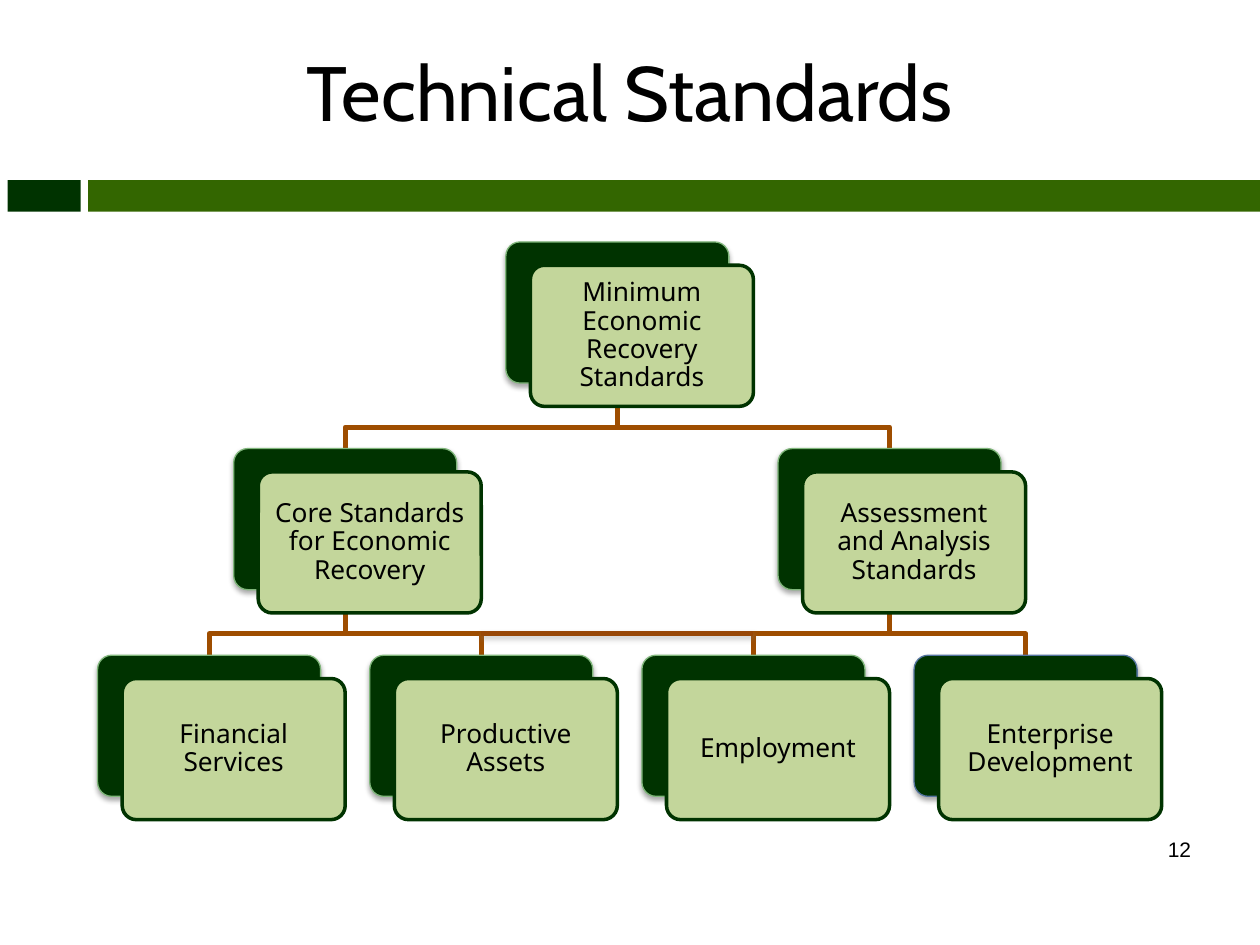
"""Build the Technical Standards slide: a three-level tree of standards."""
from lxml import etree
from pptx import Presentation
from pptx.dml.color import RGBColor
from pptx.enum.shapes import MSO_CONNECTOR, MSO_SHAPE
from pptx.enum.text import MSO_ANCHOR, PP_ALIGN
from pptx.oxml.ns import qn
from pptx.util import Inches, Pt

BLACK = RGBColor(0x00, 0x00, 0x00)
DARK_GREEN = RGBColor(0x00, 0x33, 0x00)
BAR_GREEN = RGBColor(0x33, 0x66, 0x00)
CARD_GREEN = RGBColor(0xC3, 0xD6, 0x9B)
EDGE_GREEN = RGBColor(0x80, 0xB6, 0x7B)
EDGE_BLUE = RGBColor(0x54, 0x74, 0xA0)
BRANCH_BROWN = RGBColor(0x9E, 0x4D, 0x00)
LINK_BROWN = RGBColor(0x98, 0x48, 0x07)

CARD_WIDTH, CARD_HEIGHT = 1.77, 1.12
OFFSET_X, OFFSET_Y = 0.195, 0.185
FIRST_CENTER, COLUMN_STEP = 1.66, 1.08
FIRST_TOP, LEVEL_STEP = 1.92, 1.64
STEM = 0.35

NODES = [
    ("Minimum Economic Recovery Standards", 3, 0, None),
    ("Core Standards for Economic Recovery", 1, 1, 3),
    ("Financial Services", 0, 2, 1),
    ("Productive Assets", 2, 2, 1),
    ("Assessment and Analysis Standards", 5, 1, 3),
    ("Employment", 4, 2, 5),
    ("Enterprise Development", 6, 2, 5),
]


def add_block(kind, left, top, width, height, fill, edge=None, weight=0):
    block = slide.shapes.add_shape(
        kind, Inches(left), Inches(top), Inches(width), Inches(height))
    block.shadow.inherit = False
    block.fill.solid()
    block.fill.fore_color.rgb = fill
    if edge is None:
        block.line.fill.background()
    else:
        block.adjustments[0] = 0.1
        block.line.color.rgb = edge
        block.line.width = Pt(weight)
    return block


def add_shadow(properties, color, opacity, distance):
    effects = properties.find(qn("a:effectLst"))
    if effects is None:
        effects = etree.SubElement(properties, qn("a:effectLst"))
    shadow = etree.SubElement(
        effects, qn("a:outerShdw"), blurRad=str(Pt(3.1)),
        dist=str(Pt(distance)), dir="5400000", rotWithShape="0")
    tint = etree.SubElement(shadow, qn("a:srgbClr"), val=str(color))
    etree.SubElement(tint, qn("a:alpha"), val=str(opacity * 1000))


deck = Presentation()
deck.slide_width, deck.slide_height = Inches(10), Inches(7.5)
slide = deck.slides.add_slide(deck.slide_layouts[5])

title = slide.shapes.title
title.left, title.top = Inches(0.5), Inches(0.3)
title.width, title.height = Inches(9), Inches(1.25)
title.text_frame.text = "Technical Standards"
title.text_frame.vertical_anchor = MSO_ANCHOR.TOP
heading = title.text_frame.paragraphs[0]
heading.alignment = PP_ALIGN.CENTER
heading.font.name, heading.font.size = "Cabin", Pt(44)
heading.font.color.rgb = BLACK

add_block(MSO_SHAPE.RECTANGLE, 0.7, 1.43, 9.3, 0.25, BAR_GREEN)
add_block(MSO_SHAPE.RECTANGLE, 0.06, 1.43, 0.58, 0.25, DARK_GREEN)

for label, column, level, parent in NODES:
    if parent is None:
        continue
    child_x = Inches(FIRST_CENTER + column * COLUMN_STEP)
    parent_x = Inches(FIRST_CENTER + parent * COLUMN_STEP)
    child_top = FIRST_TOP + level * LEVEL_STEP
    start_y = Inches(child_top - LEVEL_STEP + CARD_HEIGHT)
    bend_y = start_y + Inches(STEM)
    builder = slide.shapes.build_freeform(parent_x, start_y)
    builder.add_line_segments(
        [(parent_x, bend_y), (child_x, bend_y), (child_x, Inches(child_top))],
        close=False)
    branch = builder.convert_to_shape()
    branch.shadow.inherit = False
    branch.fill.background()
    branch.line.color.rgb = BRANCH_BROWN
    branch.line.width = Pt(3)

for label, column, level, parent in NODES:
    left = FIRST_CENTER + column * COLUMN_STEP - CARD_WIDTH / 2
    top = FIRST_TOP + level * LEVEL_STEP
    edge = EDGE_BLUE if label == "Enterprise Development" else EDGE_GREEN
    back = add_block(MSO_SHAPE.ROUNDED_RECTANGLE, left, top,
                     CARD_WIDTH, CARD_HEIGHT, DARK_GREEN, edge, 0.75)
    add_shadow(back.element.spPr, BLACK, 35, 1.8)
    card = add_block(MSO_SHAPE.ROUNDED_RECTANGLE, left + OFFSET_X, top + OFFSET_Y,
                     CARD_WIDTH, CARD_HEIGHT, CARD_GREEN, DARK_GREEN, 2)
    frame = card.text_frame
    frame.word_wrap = True
    frame.vertical_anchor = MSO_ANCHOR.MIDDLE
    frame.margin_left = frame.margin_right = Inches(0.06)
    frame.margin_top = frame.margin_bottom = Inches(0.06)
    frame.text = label
    para = frame.paragraphs[0]
    para.alignment = PP_ALIGN.CENTER
    para.line_spacing = 0.9
    para.font.name, para.font.size = "Noto Sans", Pt(15)
    para.font.color.rgb = BLACK

number_box = slide.shapes.add_textbox(
    Inches(9.17), Inches(6.59), Inches(0.48), Inches(0.3))
number_box.text_frame.word_wrap = True
number_box.text_frame.text = "12"
number = number_box.text_frame.paragraphs[0]
number.font.name, number.font.size = "Arial", Pt(12)
number.font.color.rgb = BLACK

link_y = Inches(5.03)
link = slide.shapes.add_connector(
    MSO_CONNECTOR.STRAIGHT, Inches(3.82), link_y, Inches(5.98), link_y)
link.line.color.rgb = LINK_BROWN
link.line.width = Pt(3)
add_shadow(link.element.spPr, RGBColor(0x80, 0x80, 0x80), 38, 1.6)

deck.save("out.pptx")
